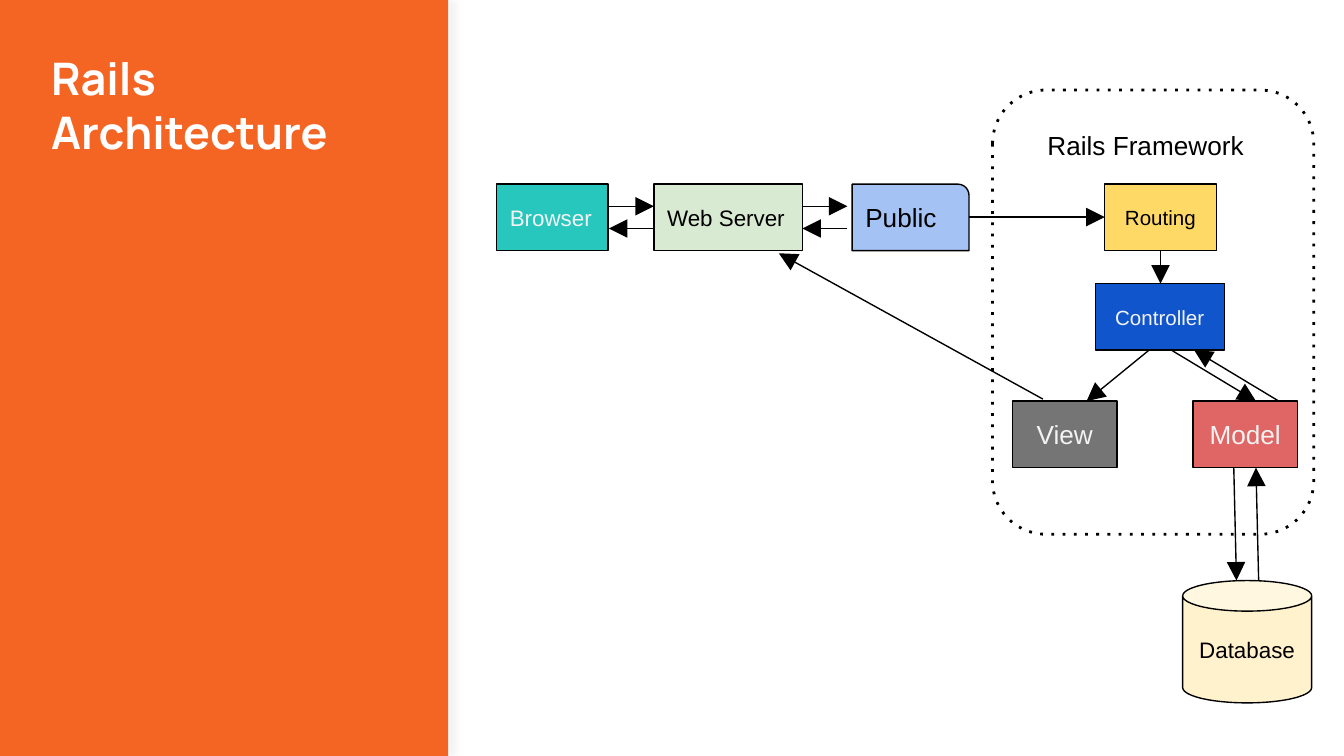
from pptx import Presentation
from pptx import util as u
from pptx.dml import color
from pptx.enum import shapes, text
from pptx.oxml import ns, parse_xml

PX = 4572
KIND = shapes.MSO_SHAPE
LEFT, CENTER = text.PP_ALIGN.LEFT, text.PP_ALIGN.CENTER
NODE_HEIGHT = 99
COLORS = {
    "panel": "F46524", "edge": "F2F2F2", "black": "000000", "white": "FFFFFF",
    "pale": "F3F3F3", "browser": "27C7BD", "server": "D9EAD3",
    "public": "A4C2F4", "routing": "FFD966", "controller": "1155CC",
    "view": "757575", "model": "E06666", "database": "FFF2CC",
}
FRAME_FORMAT = {
    "word_wrap": True, "auto_size": text.MSO_AUTO_SIZE.NONE,
    "margin_left": 20 * PX, "margin_right": 20 * PX,
    "margin_top": 20 * PX, "margin_bottom": 20 * PX,
}


def rgb(name):
    """Return the named colour."""
    return color.RGBColor.from_string(COLORS[name])


def apply(target, values):
    """Set every attribute in values on the target."""
    for name, value in values.items():
        setattr(target, name, value)


def emu(*lengths):
    """Turn px lengths into EMU."""
    return [u.Emu(length * PX) for length in lengths]


def write(shape, words, size, ink, align=LEFT, anchor=text.MSO_ANCHOR.MIDDLE,
          font="Arial", bold=False):
    """Put one formatted paragraph into a shape."""
    frame = shape.text_frame
    apply(frame, {**FRAME_FORMAT, "vertical_anchor": anchor})
    paragraph = frame.paragraphs[0]
    paragraph.alignment = align
    run = paragraph.add_run()
    run.text = words
    apply(run.font, {"name": font, "size": u.Pt(size), "bold": bold})
    run.font.color.rgb = rgb(ink)


def add_block(slide, kind, box, fill=None, width=0.75):
    """Add a shape with an optional fill and a black outline."""
    shape = slide.shapes.add_shape(kind, *emu(*box))
    shape.shadow.inherit = False
    if fill:
        shape.fill.solid()
        shape.fill.fore_color.rgb = rgb(fill)
    else:
        shape.fill.background()
    if width:
        shape.line.color.rgb = rgb("black")
        shape.line.width = u.Pt(width)
    else:
        shape.line.fill.background()
    return shape


def add_line_detail(shape, tag, attributes):
    """Append a dash or arrowhead element to the outline of a shape."""
    shape.line._get_or_add_ln().append(parse_xml(
        f'<a:{tag} {ns.nsdecls("a")} {attributes}/>'))


def add_line(slide, start, end, ink="black", effect=""):
    """Add a thin straight line with the given effect only."""
    line = slide.shapes.add_connector(
        shapes.MSO_CONNECTOR.STRAIGHT, *emu(*start, *end))
    line.line.color.rgb = rgb(ink)
    line.line.width = u.Pt(0.75)
    line._element.spPr.append(parse_xml(
        f"<a:effectLst {ns.nsdecls('a')}>{effect}</a:effectLst>"))
    return line


def add_arrow(slide, start, end):
    """Add a line with a large triangle at its end."""
    arrow = add_line(slide, start, end)
    add_line_detail(arrow, "tailEnd", 'type="triangle" w="lg" len="lg"')


def title_panel(slide, box):
    """Build the coloured panel with the slide title."""
    left, top, width, height = box
    edge = left + width - 4
    shadow = (f'<a:outerShdw blurRad="{u.Pt(4)}" dist="{u.Pt(3)}" dir="0">'
              f'<a:srgbClr val="{COLORS["black"]}"><a:alpha val="40000"/>'
              '</a:srgbClr></a:outerShdw>')
    add_line(slide, (edge, top), (edge, top + height - 2), "edge", shadow)
    add_block(slide, KIND.RECTANGLE, box, "panel", 0)
    title = slide.shapes.title
    slide.shapes._spTree.append(title._element)
    place = emu(left + 56, top + 56, 542, 934)
    apply(title, dict(zip(("left", "top", "width", "height"), place)))
    write(title, "Rails Architecture", 24, "white",
          anchor=text.MSO_ANCHOR.TOP, font="Manrope", bold=True)


def request_chain(slide, box):
    """Build the browser, web server and public boxes and their exchanges."""
    left, top, _, height = box
    nodes = [
        ("Browser", 0, 166, 12, "browser", "pale", KIND.RECTANGLE),
        ("Web Server", 234, 221, 12, "server", "black", KIND.RECTANGLE),
        ("Public", 529, 174, 14, "public", "black", KIND.ROUND_1_RECTANGLE),
    ]
    for words, x, width, size, fill, ink, kind in nodes:
        node = add_block(slide, kind, (left + x, top, width, height), fill)
        write(node, words, size, ink)
    for x in (left + 167, left + 455):
        add_arrow(slide, (x, top + 33), (x + 67, top + 33))
        add_arrow(slide, (x + 67, top + 66), (x, top + 66))


def framework(slide, box):
    """Build the dotted framework frame with its parts and arrows."""
    left, top, _, _ = box
    frame = add_block(slide, KIND.FLOWCHART_ALTERNATE_PROCESS, box, width=1.5)
    add_line_detail(frame, "prstDash", 'val="dot"')
    label = slide.shapes.add_textbox(*emu(left + 62, top + 38, 376, 70))
    write(label, "Rails Framework", 14, "black", anchor=text.MSO_ANCHOR.TOP)
    nodes = [
        ("Routing", 167, 140, 166, 11, "routing", "black"),
        ("Controller", 153, 288, 192, 11, "controller", "pale"),
        ("View", 30, 463, 155, 14, "view", "pale"),
        ("Model", 298, 463, 156, 14, "model", "pale"),
    ]
    for words, x, y, width, size, fill, ink in nodes:
        place = (left + x, top + y, width, NODE_HEIGHT)
        write(add_block(slide, KIND.RECTANGLE, place, fill),
              words, size, ink, CENTER)
    arrows = [(250, 239, 250, 288), (233, 387, 140, 463),
              (266, 387, 392, 463), (426, 463, 300, 387)]
    for x1, y1, x2, y2 in arrows:
        add_arrow(slide, (left + x1, top + y1), (left + x2, top + y2))


def database(slide, box):
    """Build the database cylinder and its exchange with the model above."""
    left, top, _, _ = box
    can = add_block(slide, KIND.CAN, box, "database")
    write(can, "Database", 12, "black", CENTER)
    add_arrow(slide, (left + 76, top - 168), (left + 80, top))
    add_arrow(slide, (left + 113, top), (left + 109, top - 168))


def main():
    """Build and save the slide."""
    presentation = Presentation()
    apply(presentation, {"slide_width": u.Emu(2000 * PX),
                         "slide_height": u.Emu(1125 * PX)})
    slide = presentation.slides.add_slide(presentation.slide_layouts[5])
    title_panel(slide, (0, 0, 667, 1125))
    framework(slide, (1477, 134, 478, 661))
    request_chain(slide, (739, 274, 703, NODE_HEIGHT))
    database(slide, (1760, 864, 192, 182))
    add_arrow(slide, (1442, 323), (1644, 323))
    add_arrow(slide, (1552, 594), (1159, 377))
    presentation.save("out.pptx")


if __name__ == "__main__":
    main()
